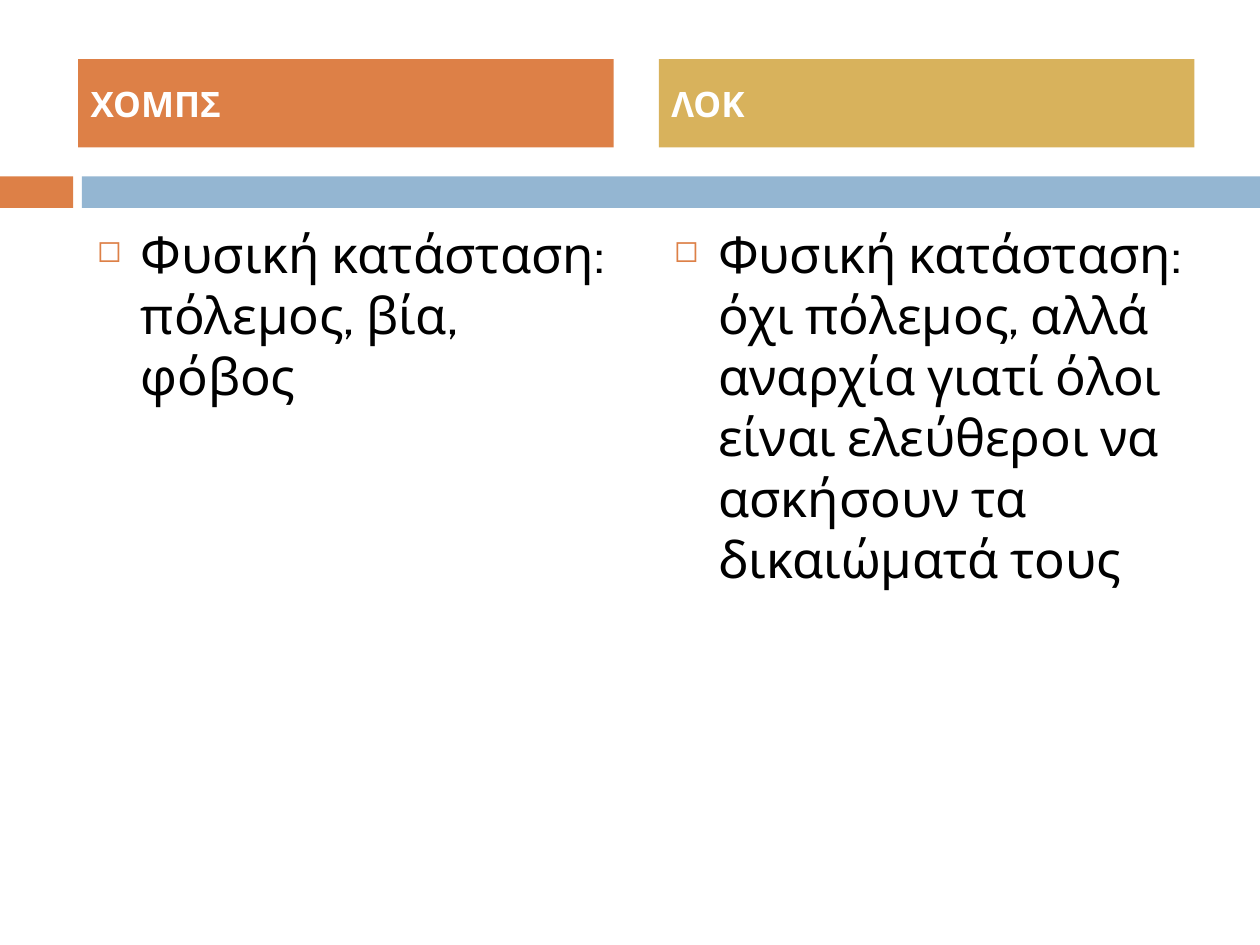
"""Build a slide that compares two thinkers in two columns."""
from lxml import etree
from pptx import Presentation
from pptx.dml.color import RGBColor
from pptx.enum import shapes, text
from pptx.oxml import ns
from pptx.util import Inches, Pt

HUES = {"orange": "DD8047", "gold": "D8B25C", "blue": "94B6D2",
        "white": "FFFFFF", "black": "000000"}
FONT = "Cabin"
COLS = [
    ("ΧΟΜΠΣ", "orange", 0.62, 0.67, "Φυσική κατάσταση: πόλεμος, βία, φόβος"),
    ("ΛΟΚ", "gold", 5.23, 5.25,
     "Φυσική κατάσταση: όχι πόλεμος, αλλά αναρχία γιατί όλοι είναι "
     "ελεύθεροι να ασκήσουν τα δικαιώματά τους"),
]


def paint(name):
    """Return the named colour."""
    return RGBColor.from_string(HUES[name])


def add_bar(slide, hue, *box):
    """Add a plain filled rectangle."""
    bar = slide.shapes.add_shape(shapes.MSO_SHAPE.RECTANGLE, *map(Inches, box))
    bar.shadow.inherit = False
    bar.fill.solid()
    bar.fill.fore_color.rgb = paint(hue)
    bar.line.fill.background()
    return bar


def add_bullet(para):
    """Give a paragraph a hanging square bullet."""
    props = para._p.get_or_add_pPr()
    props.set("marL", str(Inches(0.35)))
    props.set("indent", str(Inches(-0.35)))
    color = etree.SubElement(props, ns.qn("a:buClr"))
    etree.SubElement(color, ns.qn("a:srgbClr"), val=HUES["orange"])
    etree.SubElement(props, ns.qn("a:buSzPct"), val="60000")
    etree.SubElement(props, ns.qn("a:buChar"), char="◻")


def put_text(shape, words, size=29, hue="black", bold=False, bullet=False,
             anchor=text.MSO_ANCHOR.TOP):
    """Write one formatted paragraph into a shape."""
    frame = shape.text_frame
    frame.word_wrap = True
    frame.vertical_anchor = anchor
    para = frame.paragraphs[0]
    para.alignment = text.PP_ALIGN.LEFT
    para.space_before = Pt(7)
    if bullet:
        add_bullet(para)
    run = para.add_run()
    run.text = words
    run.font.name = FONT
    run.font.size = Pt(size)
    run.font.bold = bold
    run.font.color.rgb = paint(hue)


def add_col(slide, head, hue, left, inner, body):
    """Add a heading bar and the bulleted text under it."""
    box = slide.shapes.add_textbox(*map(Inches, (inner, 1.72, 4.25, 4.86)))
    put_text(box, body, bullet=True)
    bar = add_bar(slide, hue, left, 0.47, 4.25, 0.7)
    put_text(bar, head, size=20, hue="white", bold=True,
             anchor=text.MSO_ANCHOR.MIDDLE)


def main():
    """Build and save the slide."""
    deck = Presentation()
    deck.slide_width, deck.slide_height = Inches(10), Inches(7.5)
    slide = deck.slides.add_slide(deck.slide_layouts[6])
    add_bar(slide, "orange", 0, 1.4, 0.58, 0.25)
    add_bar(slide, "blue", 0.65, 1.4, 9.35, 0.25)
    for col in COLS:
        add_col(slide, *col)
    deck.save("out.pptx")


if __name__ == "__main__":
    main()
